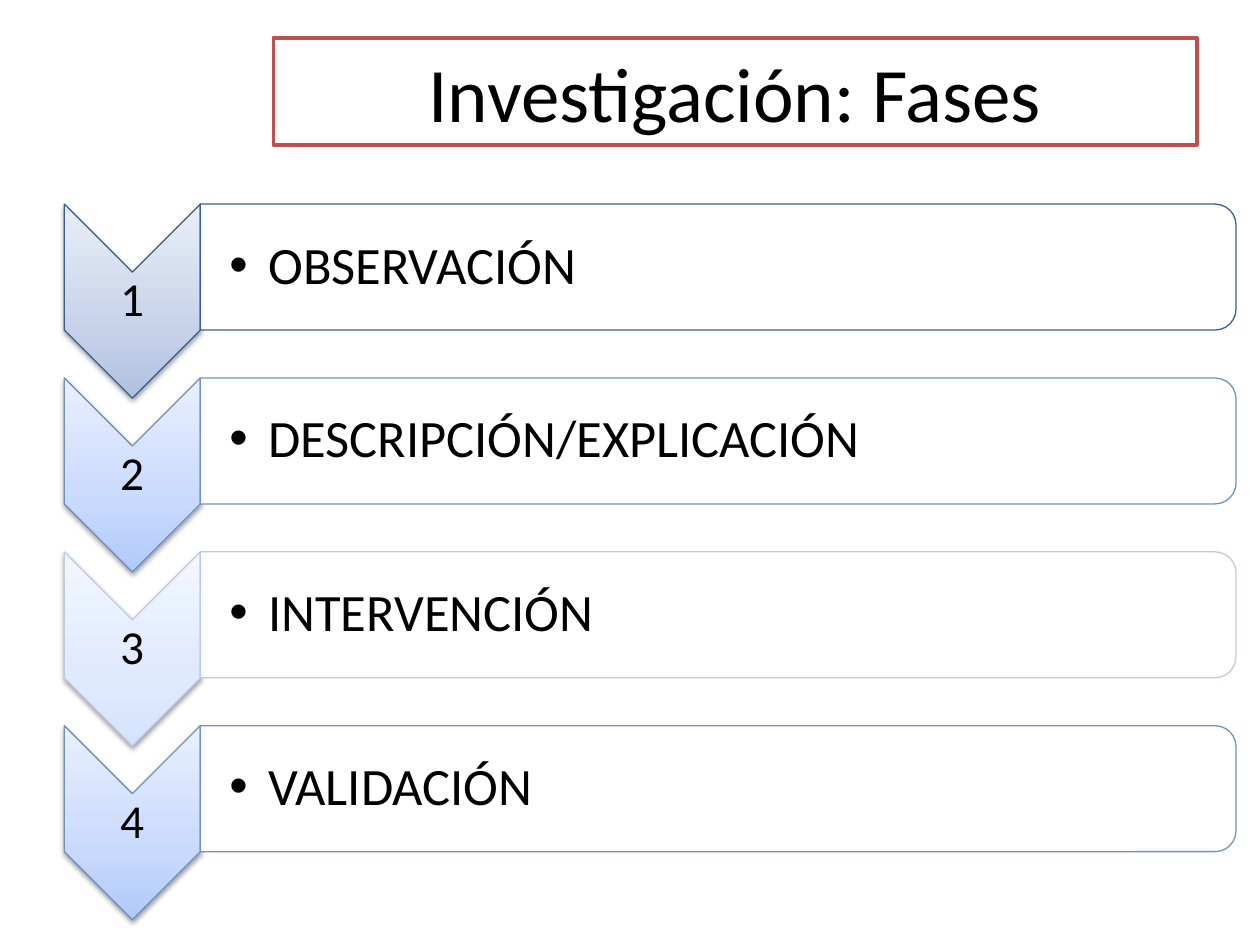
import lxml.etree
import pptx
import pptx.dml.color
import pptx.enum.shapes
import pptx.enum.text
import pptx.oxml
import pptx.oxml.ns
import pptx.util

Inches = pptx.util.Inches
Pt = pptx.util.Pt
SHAPE = pptx.enum.shapes.MSO_SHAPE
ALIGN = pptx.enum.text.PP_ALIGN
MIDDLE = pptx.enum.text.MSO_ANCHOR.MIDDLE
qn = pptx.oxml.ns.qn
NAMESPACE = pptx.oxml.ns.nsdecls("a")


def color(hex_code):
    return pptx.dml.color.RGBColor.from_string(hex_code)


class PhaseSlide:
    font_name = "Calibri"
    ink = "000000"
    paper = "FFFFFF"

    def __init__(self, presentation):
        self.slide = presentation.slides.add_slide(presentation.slide_layouts[5])

    def style_text(self, paragraph, size, align):
        paragraph.alignment = align
        for run in paragraph.runs:
            run.font.name = self.font_name
            run.font.size = Pt(size)
            run.font.color.rgb = color(self.ink)

    def outline(self, shape, hex_code, width):
        shape.line.color.rgb = color(hex_code)
        shape.line.width = Pt(width)

    def title(self, text, left, top, width, height):
        heading = self.slide.shapes.title
        heading.left, heading.top = Inches(left), Inches(top)
        heading.width, heading.height = Inches(width), Inches(height)
        heading.fill.solid()
        heading.fill.fore_color.rgb = color(self.paper)
        self.outline(heading, "C0504D", 2)
        heading.text_frame.text = text
        heading.text_frame.vertical_anchor = MIDDLE
        self.style_text(heading.text_frame.paragraphs[0], 44, ALIGN.CENTER)

    def quarter_turned(self, preset, left, top, width, height, line):
        shape = self.slide.shapes.add_shape(
            preset,
            Inches(left + (width - height) / 2),
            Inches(top + (height - width) / 2),
            Inches(height),
            Inches(width),
        )
        shape.rotation = 90
        shape.shadow.inherit = False
        shape.fill.solid()
        shape.fill.fore_color.rgb = color(self.paper)
        self.outline(shape, line, 0.75)
        return shape

    def chevron(self, left, top, width, height, stops, line):
        arrow = self.quarter_turned(SHAPE.CHEVRON, left, top, width, height, line)
        properties = arrow.element.spPr
        stop_xml = "".join(
            f'<a:gs pos="{position}"><a:srgbClr val="{stop}"/></a:gs>'
            for position, stop in zip((0, 35000, 100000), stops)
        )
        gradient = pptx.oxml.parse_xml(
            f'<a:gradFill {NAMESPACE} rotWithShape="0"><a:gsLst>{stop_xml}</a:gsLst>'
            '<a:lin ang="16200000" scaled="0"/></a:gradFill>'
        )
        properties.replace(properties.find(qn("a:solidFill")), gradient)
        properties.find(qn("a:effectLst")).append(pptx.oxml.parse_xml(
            f'<a:outerShdw {NAMESPACE} blurRad="{Pt(3.1)}" dist="{Pt(1.6)}" '
            'dir="5400000" rotWithShape="0"><a:srgbClr val="000000">'
            '<a:alpha val="38000"/></a:srgbClr></a:outerShdw>'
        ))

    def panel(self, left, top, width, height, line):
        panel = self.quarter_turned(
            SHAPE.ROUND_2_SAME_RECTANGLE, left, top, width, height, line
        )
        tint = panel.element.spPr.find(qn("a:solidFill"))[0]
        lxml.etree.SubElement(tint, qn("a:alpha")).set("val", "90000")

    def label(self, text, left, top, width, height, size, bullet=False):
        box = self.slide.shapes.add_textbox(
            Inches(left), Inches(top), Inches(width), Inches(height)
        )
        frame = box.text_frame
        frame.word_wrap = True
        frame.vertical_anchor = MIDDLE
        frame.margin_left = Inches(0.23 if bullet else 0.02)
        frame.margin_right = frame.margin_top = frame.margin_bottom = Inches(0.02)
        frame.text = text
        paragraph = frame.paragraphs[0]
        paragraph.line_spacing = 0.9
        if bullet:
            paragraph.level = 1
            settings = paragraph._p.get_or_add_pPr()
            settings.set("marL", str(Inches(0.31)))
            settings.set("indent", str(Inches(-0.31)))
            lxml.etree.SubElement(settings, qn("a:buFont")).set("typeface", "Arial")
            lxml.etree.SubElement(settings, qn("a:buChar")).set("char", "•")
        self.style_text(paragraph, size, ALIGN.LEFT if bullet else ALIGN.CENTER)


def main():
    presentation = pptx.Presentation()
    presentation.slide_width = Inches(10)
    presentation.slide_height = Inches(7.5)
    page = PhaseSlide(presentation)
    page.title("Investigación: Fases", 2.17, 0.3, 7.33, 0.85)

    dark = (("AFC0E1", "C7D2E9", "E9EEF7"), "3A5F8C")
    medium = (("B0CAFB", "C8D9FB", "E9F0FF"), "7391BF")
    light = (("D4E2FD", "E0EAFE", "F2F6FF"), "BECADF")
    phases = [
        ("OBSERVACIÓN", dark),
        ("DESCRIPCIÓN/EXPLICACIÓN", medium),
        ("INTERVENCIÓN", light),
        ("VALIDACIÓN", medium),
    ]
    left, first_top, pitch = 0.51, 1.62, 1.38
    arrow_width, arrow_height = 1.08, 1.54
    panel_left = left + arrow_width

    for index, (phase, (stops, line)) in enumerate(phases):
        top = first_top + index * pitch
        page.chevron(left, top, arrow_width, arrow_height, stops, line)
        page.label(str(index + 1), left, top + 0.54, arrow_width, 0.46, 27)
        page.panel(panel_left, top, 8.22, 1, line)
        page.label(phase, panel_left, top + 0.05, 8.17, 0.9, 30, bullet=True)

    presentation.save("out.pptx")


if __name__ == "__main__":
    main()
